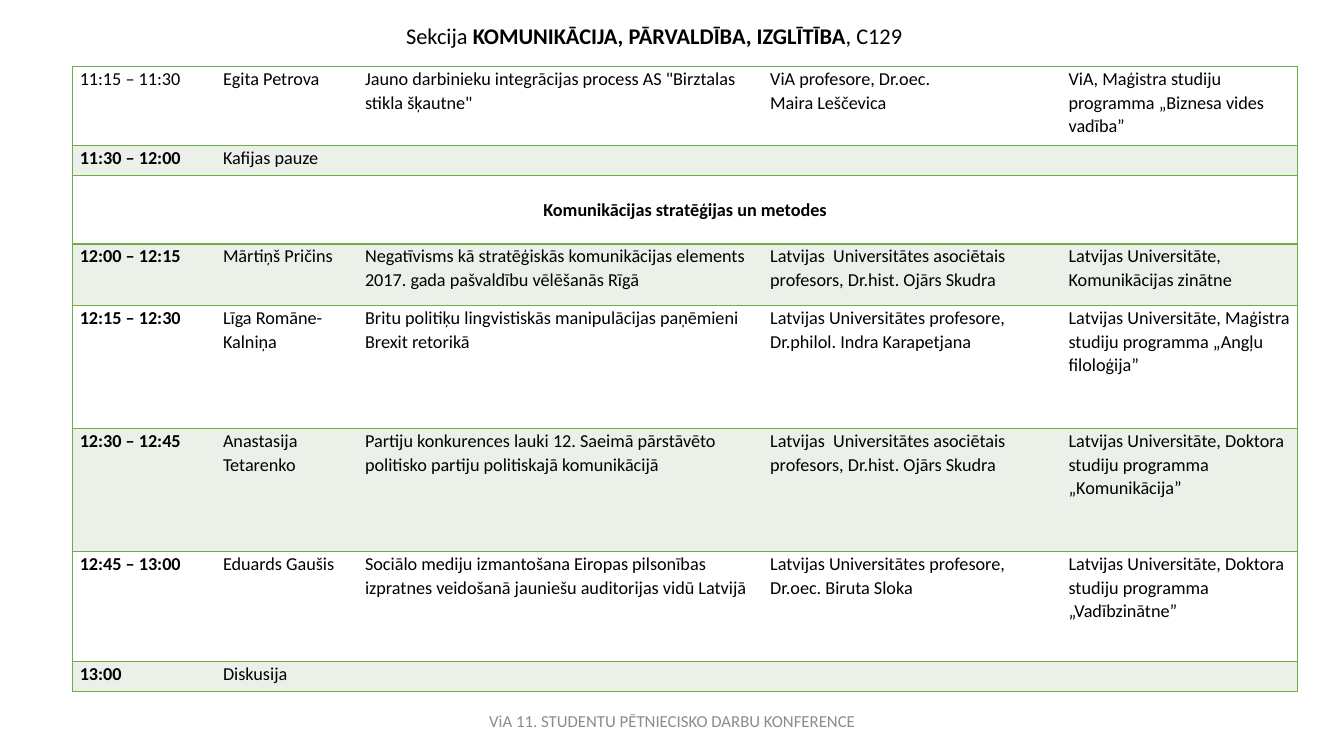
from lxml import etree
from pptx import Presentation
from pptx.dml.color import RGBColor
from pptx.enum.text import MSO_ANCHOR, MSO_AUTO_SIZE, PP_ALIGN
from pptx.oxml.ns import qn
from pptx.util import Cm, Pt

CENTER, LEFT = PP_ALIGN.CENTER, PP_ALIGN.LEFT
TOP, MIDDLE = MSO_ANCHOR.TOP, MSO_ANCHOR.MIDDLE
NO_FIT = MSO_AUTO_SIZE.NONE

TITLE = [("Sekcija ", False), ("KOMUNIKĀCIJA, PĀRVALDĪBA, IZGLĪTĪBA", True), (", C129", False)]
FOOTER = [("ViA 11. STUDENTU PĒTNIECISKO DARBU KONFERENCE", False)]
SCHEDULE = [
    ("11:15 – 11:30", "Egita Petrova",
     'Jauno darbinieku integrācijas process AS "Birztalas stikla šķautne"',
     "ViA profesore, Dr.oec.\nMaira Leščevica",
     "ViA, Maģistra studiju programma „Biznesa vides vadība”"),
    ("11:30 – 12:00", "Kafijas pauze"),
    ("Komunikācijas stratēģijas un metodes",),
    ("12:00 – 12:15", "Mārtiņš Pričins",
     "Negatīvisms kā stratēģiskās komunikācijas elements 2017. gada pašvaldību vēlēšanās Rīgā",
     "Latvijas  Universitātes asociētais profesors, Dr.hist. Ojārs Skudra",
     "Latvijas Universitāte, Komunikācijas zinātne"),
    ("12:15 – 12:30", "Līga Romāne-Kalniņa",
     "Britu politiķu lingvistiskās manipulācijas paņēmieni Brexit retorikā",
     "Latvijas Universitātes profesore, Dr.philol. Indra Karapetjana",
     "Latvijas Universitāte, Maģistra studiju programma „Angļu filoloģija”"),
    ("12:30 – 12:45", "Anastasija Tetarenko",
     "Partiju konkurences lauki 12. Saeimā pārstāvēto politisko partiju politiskajā komunikācijā",
     "Latvijas  Universitātes asociētais profesors, Dr.hist. Ojārs Skudra",
     "Latvijas Universitāte, Doktora studiju programma „Komunikācija”"),
    ("12:45 – 13:00", "Eduards Gaušis",
     "Sociālo mediju izmantošana Eiropas pilsonības izpratnes veidošanā jauniešu auditorijas vidū Latvijā",
     "Latvijas Universitātes profesore, Dr.oec. Biruta Sloka",
     "Latvijas Universitāte, Doktora studiju programma „Vadībzinātne”"),
    ("13:00", "Diskusija"),
]
COLUMN_WIDTHS = [3.61, 3.58, 10.21, 7.52, 5.94]
ROW_HEIGHTS = [1.98, 0.76, 1.73, 1.55, 3.1, 3.1, 2.77, 0.76]
TABLE_PLACE = (1.83, 1.68)
TITLE_PLACE = dict(left=Cm(9.83), top=Cm(0.38), width=Cm(13.31), height=Cm(0.97))
FOOTER_PLACE = (11.23, 17.65, 11.43, 1.02)


class Theme:
    """Colours, typeface and type sizes of the programme."""
    font = "Calibri"
    ink = RGBColor.from_string("000000")
    muted = RGBColor.from_string("8C8C8C")
    bands = [RGBColor.from_string("FFFFFF"), RGBColor.from_string("EBF1E9")]
    border = "70AD47"
    border_width = Pt(1)
    title_size, cell_size, footer_size = Pt(16), Pt(13), Pt(12)
    spacing = 1.07


CELL_FORMAT = dict(margin_left=Cm(0.18), margin_right=Cm(0.18), margin_top=0, margin_bottom=0)
FRAME_FORMAT = dict(auto_size=NO_FIT, margin_left=Cm(0.25), margin_right=Cm(0.25),
                    margin_top=Cm(0.13), margin_bottom=Cm(0.13))


def apply(target, values):
    for name, value in values.items():
        setattr(target, name, value)


def style_span(span, size, bold, color=Theme.ink):
    apply(span.font, dict(name=Theme.font, size=size, bold=bold))
    span.font.color.rgb = color


def write_line(frame, spans, size, color, spacing):
    para = frame.paragraphs[0]
    apply(para, dict(alignment=CENTER, line_spacing=spacing))
    for text, bold in spans:
        span = para.add_run()
        span.text = text
        style_span(span, size, bold, color)


def draw_borders(cell, shown):
    properties = cell._tc.get_or_add_tcPr()
    for side in "LRTB":
        line = etree.SubElement(properties, qn(f"a:ln{side}"), w=str(Theme.border_width))
        if side in shown:
            fill = etree.SubElement(line, qn("a:solidFill"))
            etree.SubElement(fill, qn("a:srgbClr"), val=Theme.border)
        else:
            etree.SubElement(line, qn("a:noFill"))


def fill_cell(cell, text, bold, heading):
    apply(cell, dict(CELL_FORMAT, vertical_anchor=MIDDLE if heading else TOP))
    cell.text_frame.text = text
    for para in cell.text_frame.paragraphs:
        apply(para, dict(alignment=CENTER if heading else LEFT, line_spacing=Theme.spacing))
        for span in para.runs:
            style_span(span, Theme.cell_size, bold)


def add_schedule(page):
    last = len(COLUMN_WIDTHS) - 1
    size = (sum(COLUMN_WIDTHS), sum(ROW_HEIGHTS))
    table = page.shapes.add_table(len(SCHEDULE), last + 1, *map(Cm, TABLE_PLACE + size)).table
    apply(table, dict(first_row=False, horz_banding=False))
    for column, width in zip(table.columns, COLUMN_WIDTHS):
        column.width = Cm(width)
    for index, (row, height, texts) in enumerate(zip(table.rows, ROW_HEIGHTS, SCHEDULE)):
        row.height = Cm(height)
        end = len(texts) - 1
        for position, cell in enumerate(row.cells):
            left = "L" if position == 0 else ""
            right = "R" if position in (end, last) and (end < last or position == last) else ""
            if end < last and position < end:
                right = ""
            draw_borders(cell, "TB" + left + right)
            cell.fill.solid()
            cell.fill.fore_color.rgb = Theme.bands[index % 2]
        if end < last:
            table.cell(index, end).merge(table.cell(index, last))
        for position, text in enumerate(texts):
            heading = end == 0
            bold = position == 0 and index > 0
            fill_cell(table.cell(index, position), text, bold, heading)


def main():
    deck = Presentation()
    apply(deck, dict(slide_width=Cm(33.87), slide_height=Cm(19.05)))
    page = deck.slides.add_slide(deck.slide_layouts[5])
    add_schedule(page)

    title = page.shapes.title
    apply(title, TITLE_PLACE)
    apply(title.text_frame, dict(FRAME_FORMAT, word_wrap=False, vertical_anchor=TOP))
    write_line(title.text_frame, TITLE, Theme.title_size, Theme.ink, Theme.spacing)

    footer = page.shapes.add_textbox(*map(Cm, FOOTER_PLACE))
    apply(footer.text_frame, dict(FRAME_FORMAT, word_wrap=True, vertical_anchor=MIDDLE))
    write_line(footer.text_frame, FOOTER, Theme.footer_size, Theme.muted, 1.0)
    deck.save("out.pptx")


if __name__ == "__main__":
    main()
